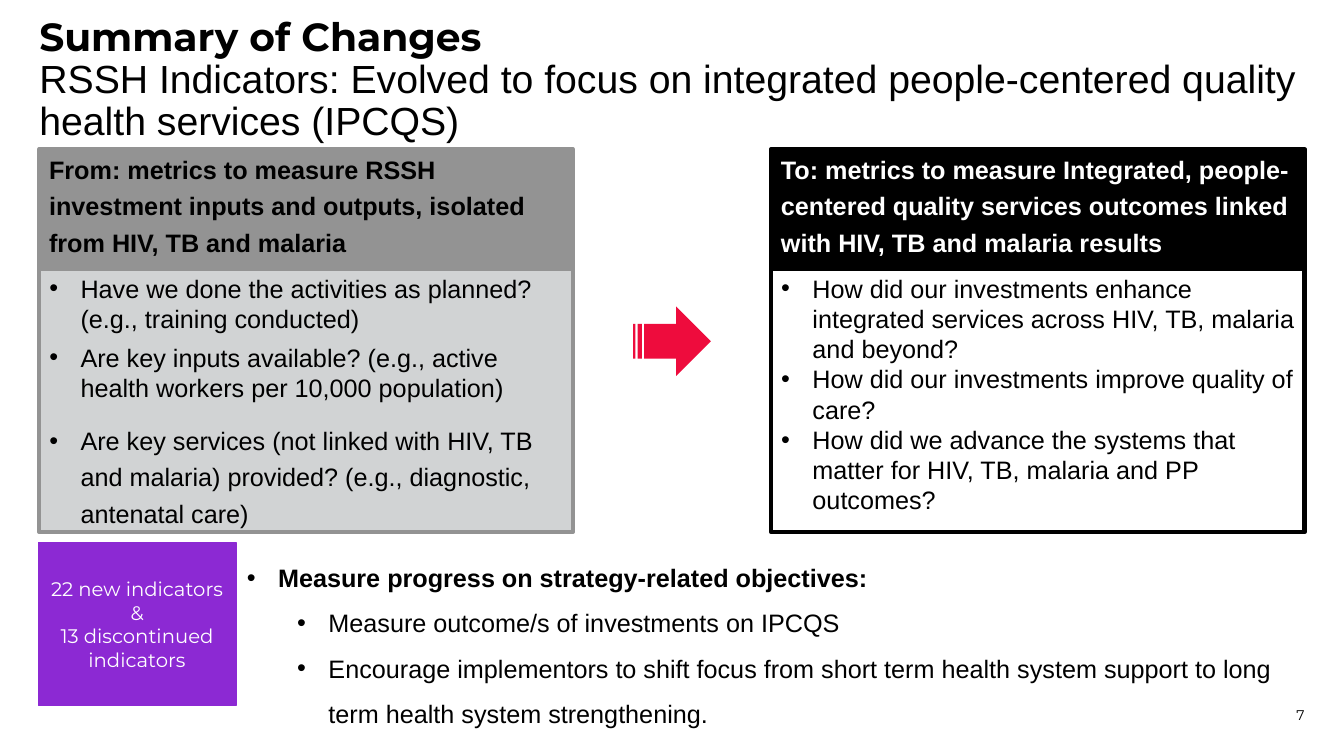
"""Build the slide that sums up how the RSSH indicators have changed."""
from dataclasses import dataclass

from lxml import etree
from pptx import Presentation, util as u
from pptx.dml.color import RGBColor
from pptx.enum import shapes, text
from pptx.oxml.ns import qn


@dataclass(frozen=True)
class Theme:
    """Colours, fonts and type sizes."""
    black: str = "000000"
    white: str = "FFFFFF"
    gray: str = "939393"
    pale: str = "D1D3D4"
    red: str = "EE0C3D"
    purple: str = "8C29D3"
    body_font: str = "Arial"
    display_font: str = "Montserrat"
    title_size: int = 28
    body_size: int = 18
    badge_size: int = 14
    number_size: int = 10


THEME = Theme()
BULLET_HANG = 0.31
NO_MARGINS = (0, 0, 0, 0)


def add_bullet(paragraph, indent):
    """Give a paragraph a hanging round bullet."""
    properties = paragraph._p.get_or_add_pPr()
    properties.set("marL", str(u.Inches(indent)))
    properties.set("indent", str(-u.Inches(BULLET_HANG)))
    etree.SubElement(properties, qn("a:buFont")).set("typeface", THEME.body_font)
    etree.SubElement(properties, qn("a:buChar")).set("char", "•")


def write(paragraph, content, *, font=THEME.body_font, size=THEME.body_size,
          color=THEME.black, bold=False, align=None, line=None, before=0,
          after=0, level=0, indent=None):
    """Add a formatted run to a paragraph and set the paragraph's layout."""
    if indent is not None:
        add_bullet(paragraph, indent)
    paragraph.level = level
    paragraph.alignment = align
    paragraph.line_spacing = line
    paragraph.space_before = u.Pt(before)
    paragraph.space_after = u.Pt(after)
    run = paragraph.add_run()
    run.text = content
    run.font.name = font
    run.font.size = u.Pt(size)
    run.font.bold = bold
    run.font.color.rgb = RGBColor.from_string(color)


class Deck:
    """Hold the theme and current slide; boxes are percentages of its size."""

    def __init__(self, theme):
        """Open a blank widescreen slide."""
        self.theme = theme
        self.presentation = Presentation()
        self.presentation.slide_width = u.Inches(13.33)
        self.presentation.slide_height = u.Inches(7.5)
        self.slide = self.presentation.slides.add_slide(
            self.presentation.slide_layouts[6])

    def place(self, left, top, width, height):
        """Turn percentages of the slide into lengths."""
        across = self.presentation.slide_width / 100
        down = self.presentation.slide_height / 100
        return [round(length) for length in
                (left * across, top * down, width * across, height * down)]

    def fill_frame(self, frame, paragraphs, anchor, **style):
        """Write (text, overrides) pairs as the paragraphs of a frame."""
        frame.word_wrap = True
        frame.vertical_anchor = anchor
        for index, (content, overrides) in enumerate(paragraphs):
            paragraph = frame.add_paragraph() if index else frame.paragraphs[0]
            write(paragraph, content, **{**style, **overrides})

    def textbox(self, box, paragraphs, margins=None,
                anchor=text.MSO_ANCHOR.TOP, **style):
        """Add a text box and return its frame."""
        frame = self.slide.shapes.add_textbox(*self.place(*box)).text_frame
        if margins:
            (frame.margin_left, frame.margin_top,
             frame.margin_right, frame.margin_bottom) = margins
        self.fill_frame(frame, paragraphs, anchor, **style)
        return frame

    def block(self, box, fill=None, border=None, weight=3,
              kind=shapes.MSO_SHAPE.RECTANGLE):
        """Add a flat preset shape."""
        shape = self.slide.shapes.add_shape(kind, *self.place(*box))
        shape.shadow.inherit = False
        if fill:
            shape.fill.solid()
            shape.fill.fore_color.rgb = RGBColor.from_string(fill)
        else:
            shape.fill.background()
        if border:
            shape.line.color.rgb = RGBColor.from_string(border)
            shape.line.width = u.Pt(weight)
        else:
            shape.line.fill.background()
        return shape

    def title(self, box, heading, subtitle):
        """Add a bold heading with a plain subtitle on the next line."""
        style = dict(size=self.theme.title_size, line=0.9)
        frame = self.textbox(box, [(heading, {})], NO_MARGINS,
                             font=self.theme.display_font, bold=True, **style)
        frame.paragraphs[0].add_line_break()
        write(frame.paragraphs[0], subtitle, **style)

    def panel(self, left, heading, items, accent, heading_width,
              fill=None, heading_color=THEME.black, after=0):
        """Add a bordered panel with a heading band and a bullet list."""
        width = 39.68
        self.block((left, 26, width, 44.4), fill, accent)
        self.block((left, 19.73, width, 15.87), accent, accent)
        self.textbox((left, 35.47, width, 34.93), items,
                     indent=BULLET_HANG, after=after)
        self.textbox((left + 0.72, 19.87, heading_width, 13.9), [(heading, {})],
                     NO_MARGINS, text.MSO_ANCHOR.MIDDLE, color=heading_color,
                     bold=True, line=1.2, before=0, after=6)

    def badge(self, box, lines, color):
        """Add a filled block with centred text."""
        shape = self.block(box, color, color, 1)
        self.fill_frame(shape.text_frame, [(line, {}) for line in lines],
                        text.MSO_ANCHOR.MIDDLE, font=self.theme.display_font,
                        size=self.theme.badge_size, color=self.theme.white,
                        align=text.PP_ALIGN.CENTER)


def main():
    """Compose and save the slide."""
    deck = Deck(THEME)
    deck.title((2.93, 2.27, 94.15, 6.8), "Summary of Changes",
               "RSSH Indicators: Evolved to focus on integrated people-centered "
               "quality health services\u00a0(IPCQS)".replace("\u00a0", " "))
    deck.panel(
        2.93,
        "From: metrics to measure RSSH investment inputs and outputs, "
        "isolated from HIV, TB and malaria",
        [("Have we done the activities as planned? (e.g., training conducted)", {}),
         ("Are key inputs available? (e.g., active health workers per 10,000 "
          "population)", {}),
         ("Are key services (not linked with HIV, TB and malaria) provided? "
          "(e.g., diagnostic, antenatal care)", dict(line=1.2, before=6))],
        THEME.gray, 37.88, fill=THEME.pale, after=6)
    deck.panel(
        57.39,
        "To: metrics to measure Integrated, people-centered quality services "
        "outcomes linked with HIV, TB and malaria results",
        [("How did our investments enhance integrated services across HIV, TB, "
          "malaria and beyond?", {}),
         ("How did our investments improve quality of care?", {}),
         ("How did we advance the systems that matter for HIV, TB, malaria and "
          "PP outcomes?", {})],
        THEME.black, 39.01, heading_color=THEME.white)
    deck.block((47.11, 40.53, 5.78, 9.2), THEME.red,
               kind=shapes.MSO_SHAPE.STRIPED_RIGHT_ARROW)
    nested = dict(level=1, indent=0.81)
    deck.textbox(
        (17.63, 71.73, 79.52, 24.8),
        [("Measure progress on strategy-related objectives:",
          dict(bold=True, indent=BULLET_HANG)),
         ("Measure outcome/s of investments on IPCQS", nested),
         ("Encourage implementors to shift focus from short term health system "
          "support to long term health system strengthening.", nested)],
        line=1.5)
    deck.badge((2.85, 71.73, 14.7, 21.6),
               ["22 new indicators &", "13 discontinued indicators"], THEME.purple)
    deck.textbox((89.72, 90.4, 7.35, 5.33), [("7", {})], NO_MARGINS,
                 text.MSO_ANCHOR.BOTTOM, font=THEME.display_font,
                 size=THEME.number_size, align=text.PP_ALIGN.RIGHT)
    deck.presentation.save("out.pptx")


if __name__ == "__main__":
    main()
